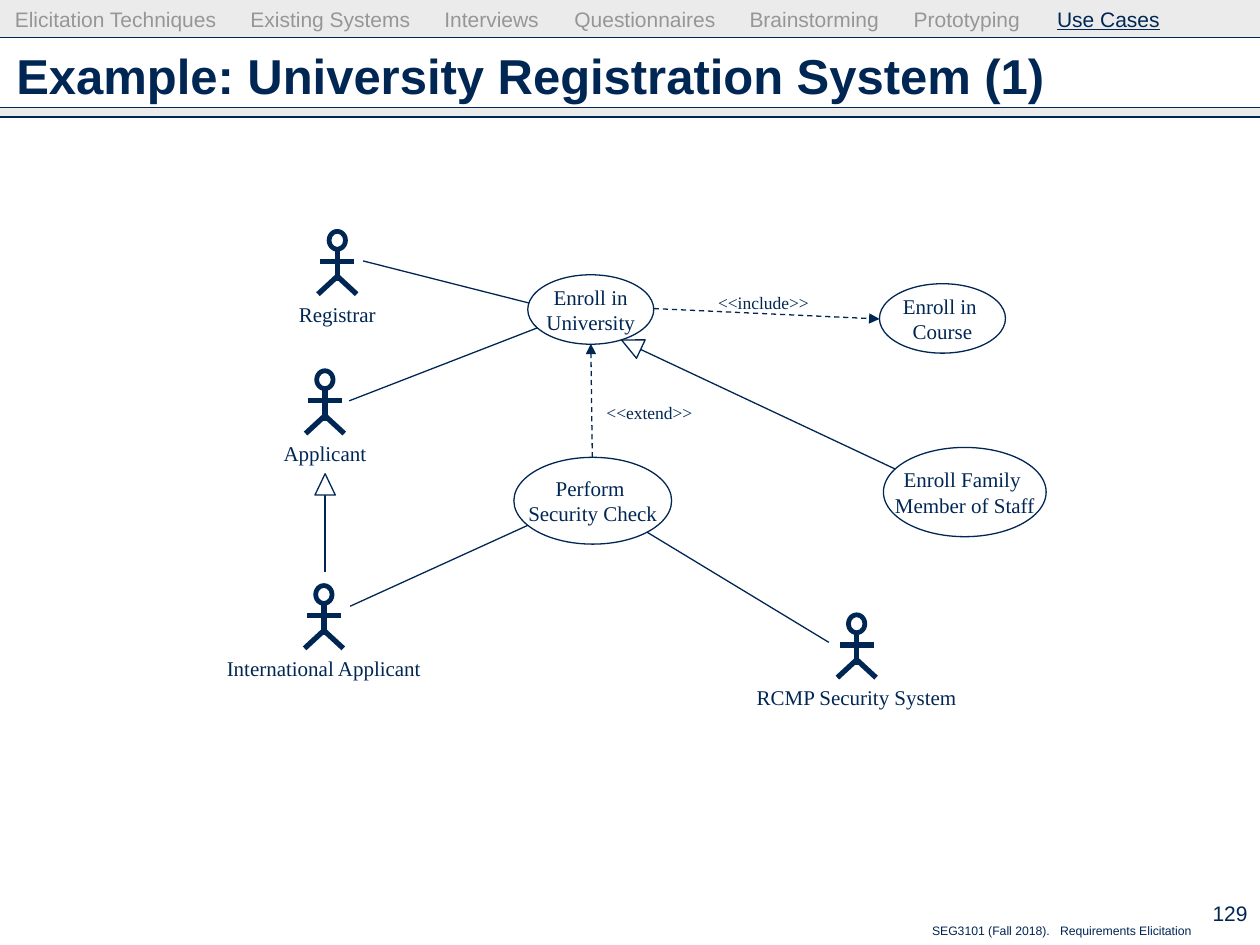
from dataclasses import dataclass

from lxml.etree import SubElement
from pptx import Presentation
from pptx.dml.color import RGBColor
from pptx.enum.dml import MSO_LINE_DASH_STYLE as Dash
from pptx.enum.shapes import MSO_CONNECTOR as Connector, MSO_SHAPE as Preset
from pptx.enum.text import MSO_ANCHOR as Anchor, PP_ALIGN as Align
from pptx.oxml.ns import qn
from pptx.util import Cm, Pt

COLORS = {"navy": "002654", "grey": "969696", "band": "CDCDCD", "white": "FFFFFF"}
SANS, SERIF = "Arial", "Times New Roman"
WIDTH, HEIGHT = 25.4, 19.05


@dataclass(frozen=True)
class Box:
    left: float
    top: float
    width: float
    height: float

    def lengths(self) -> tuple:
        return Cm(self.left), Cm(self.top), Cm(self.width), Cm(self.height)


@dataclass(frozen=True)
class Actor:
    name: str
    center: float
    top: float
    label_width: float


@dataclass(frozen=True)
class UseCase:
    name: str
    box: Box


@dataclass(frozen=True)
class Line:
    x1: float
    y1: float
    x2: float
    y2: float


ACTORS = [
    Actor("Applicant", 6.55, 7.44, 2.18),
    Actor("RCMP Security System", 17.27, 12.36, 4.57),
    Actor("Registrar", 6.8, 4.63, 2.06),
    Actor("International Applicant", 6.53, 11.77, 4.47),
]
USE_CASES = [
    UseCase("Perform \nSecurity Check", Box(10.36, 9.22, 3.18, 1.75)),
    UseCase("Enroll in\nUniversity", Box(10.64, 5.54, 2.54, 1.4)),
    UseCase("Enroll in \nCourse", Box(17.73, 5.72, 2.54, 1.4)),
    UseCase("Enroll Family \nMember of Staff", Box(17.81, 9.02, 3.28, 1.8)),
]
ASSOCIATIONS = [
    Line(12.7, 10.52, 16.71, 12.95),
    Line(11.3, 6.27, 7.32, 5.26),
    Line(11.76, 10.08, 7.06, 12.22),
    Line(11.76, 6.25, 7.04, 8.08),
]
GENERALIZATIONS = [
    (Line(18.95, 9.88, 12.8, 6.99), Box(12.52, 6.73, 0.41, 0.43), 295.2),
    (Line(6.55, 11.53, 6.55, 9.83), Box(6.35, 9.55, 0.41, 0.43), 0),
]
DEPENDENCIES = [
    ("<<include>>", Line(13.18, 6.22, 17.73, 6.43), Box(14.22, 5.77, 2.34, 0.69)),
    ("<<extend>>", Line(11.94, 9.22, 11.91, 6.93), Box(11.96, 7.98, 2.26, 0.69)),
]
SECTIONS = ["Elicitation Techniques", "Existing Systems", "Interviews",
            "Questionnaires", "Brainstorming", "Prototyping"]
SECTION_TABS = [4.75, 8.66, 11.28, 14.81, 18.12, 21.01]


def color(name: str) -> RGBColor:
    """Return the named palette colour."""
    return RGBColor.from_string(COLORS[name])


def write(shape, text: str, size: float, font: str = SERIF, align=Align.CENTER,
          tabs: tuple | list = (), tone: str = "navy"):
    """Write one uniformly styled paragraph in a shape and return it."""
    shape.text_frame.word_wrap = False
    paragraph = shape.text_frame.paragraphs[0]
    paragraph.text = text
    paragraph.alignment = align
    if tabs:
        tab_list = SubElement(paragraph._p.get_or_add_pPr(), qn("a:tabLst"))
        for position in tabs:
            SubElement(tab_list, qn("a:tab"), pos=str(Cm(position)), algn="l")
    paragraph.font.size = Pt(size)
    paragraph.font.name = font
    paragraph.font.color.rgb = color(tone)
    return paragraph


def add_text(slide, box: Box, text: str, size: float, **style):
    """Add a text box and return it with its paragraph."""
    shape = slide.shapes.add_textbox(*box.lengths())
    return shape, write(shape, text, size, **style)


def add_preset(slide, preset, box: Box, fill: str = "white"):
    """Add an outlined preset shape."""
    shape = slide.shapes.add_shape(preset, *box.lengths())
    shape.shadow.inherit = False
    shape.fill.solid()
    shape.fill.fore_color.rgb = color(fill)
    shape.line.color.rgb = color("navy")
    shape.line.width = Pt(0.75)
    return shape


def add_line(slide, line: Line, weight: float = 0.75, dependency: bool = False) -> None:
    """Add a straight line, dashed with an arrowhead for a dependency."""
    connector = slide.shapes.add_connector(
        Connector.STRAIGHT, Cm(line.x1), Cm(line.y1), Cm(line.x2), Cm(line.y2))
    connector.line.color.rgb = color("navy")
    connector.line.width = Pt(weight)
    properties = connector._element.spPr
    if dependency:
        connector.line.dash_style = Dash.DASH
        SubElement(properties.find(qn("a:ln")), qn("a:tailEnd"), type="triangle")
    SubElement(properties, qn("a:effectLst"))


def add_band(slide, top: float, height: float) -> None:
    """Add a translucent band across the slide."""
    band = add_preset(slide, Preset.RECTANGLE, Box(0, top, WIDTH, height), "band")
    band.line.fill.background()
    SubElement(band._element.spPr.find(".//" + qn("a:srgbClr")), qn("a:alpha"), val="40000")


def add_actor(slide, actor: Actor) -> None:
    """Draw a stick figure with its name below."""
    x, y = actor.center, actor.top
    head = add_preset(slide, Preset.DONUT, Box(x - 0.2, y, 0.4, 0.43), "navy")
    head.adjustments[0] = 0.17
    for limb in (Line(x, y + 0.43, x, y + 1.04),
                 Line(x - 0.34, y + 0.64, x + 0.34, y + 0.64),
                 Line(x - 0.39, y + 1.3, x, y + 0.94),
                 Line(x + 0.39, y + 1.3, x, y + 0.94)):
        add_line(slide, limb, 3)
    label = Box(x - actor.label_width / 2, y + 1.32, actor.label_width, 0.76)
    add_text(slide, label, actor.name, 12)


def add_frame(slide) -> None:
    """Draw the bands, title, section navigation and footer."""
    add_band(slide, 0, 0.76)
    add_band(slide, 2.16, 0.18)
    for y in (2.16, 0.76, 2.36):
        add_line(slide, Line(0, y, WIDTH, y))

    title, paragraph = add_text(slide, Box(0.33, 0.66, 24.74, 1.7),
                                "Example: University Registration System (1)", 28,
                                font=SANS, align=Align.LEFT)
    frame = title.text_frame
    frame.margin_left = frame.margin_right = frame.margin_top = frame.margin_bottom = 0
    frame.vertical_anchor = Anchor.MIDDLE
    frame.word_wrap = True
    paragraph.font.bold = True

    navigation, paragraph = add_text(slide, Box(0.05, 0.13, 23.83, 0.64),
                                     "\t".join(SECTIONS) + "\t", 12, font=SANS,
                                     align=Align.LEFT, tabs=SECTION_TABS, tone="grey")
    navigation.text_frame.margin_top = 0
    navigation.text_frame.word_wrap = True
    current = paragraph.add_run()
    current.text = "Use Cases"
    current.font.underline = True
    current.font.color.rgb = color("navy")

    footer, _ = add_text(slide, Box(18.54, 18.49, 5.75, 0.56),
                         "SEG3101 (Fall 2018).\tRequirements Elicitation", 7,
                         font=SANS, align=Align.LEFT, tabs=[2.58])
    footer.text_frame.word_wrap = True
    number, _ = add_text(slide, Box(23.62, 17.98, 1.78, 0.86), "129", 12,
                         font=SANS, align=Align.RIGHT)
    number.text_frame.vertical_anchor = Anchor.MIDDLE


def add_diagram(slide) -> None:
    """Draw the use case diagram."""
    for association in ASSOCIATIONS:
        add_line(slide, association)
    for line, head, rotation in GENERALIZATIONS:
        add_line(slide, line)
        add_preset(slide, Preset.ISOSCELES_TRIANGLE, head).rotation = rotation
    for use_case in USE_CASES:
        ellipse = add_preset(slide, Preset.OVAL, use_case.box)
        write(ellipse, use_case.name, 12)
        ellipse.text_frame.vertical_anchor = Anchor.MIDDLE
    for text, line, label in DEPENDENCIES:
        add_line(slide, line, dependency=True)
        add_text(slide, label, text, 10)
    for actor in ACTORS:
        add_actor(slide, actor)


def main() -> None:
    """Build and save the slide."""
    presentation = Presentation()
    presentation.slide_width, presentation.slide_height = Cm(WIDTH), Cm(HEIGHT)
    slide = presentation.slides.add_slide(presentation.slide_layouts[6])
    add_frame(slide)
    add_diagram(slide)
    presentation.save("out.pptx")


if __name__ == "__main__":
    main()
